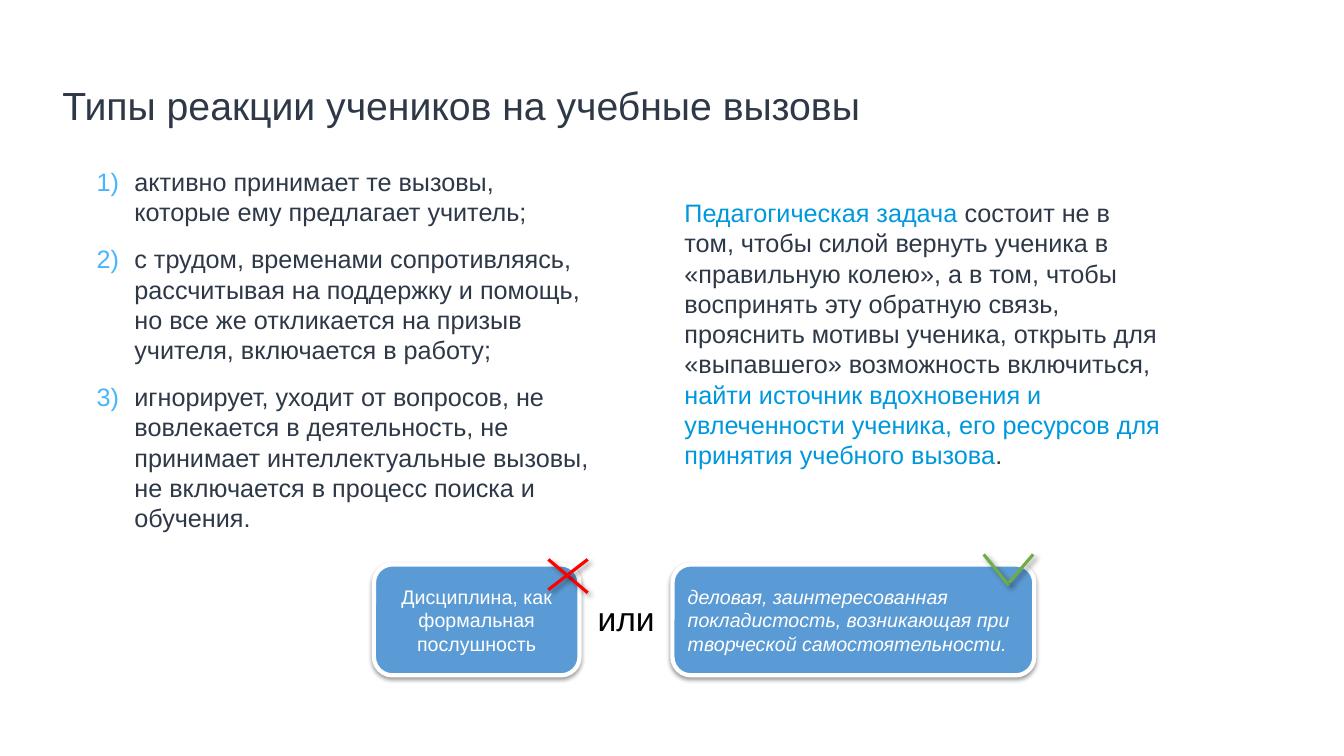
from lxml.etree import SubElement
from pptx import Presentation
from pptx.dml.color import RGBColor as Color
from pptx.enum.shapes import MSO_CONNECTOR as Connector, MSO_SHAPE as Shape
from pptx.enum.text import MSO_ANCHOR as Anchor, MSO_AUTO_SIZE as Fit, PP_ALIGN as Align
from pptx.oxml.ns import qn
from pptx.util import Pt

COLORS = {
    "ink": "2E3847", "accent": "0098DC", "number": "48B6FB", "black": "000000",
    "white": "FFFFFF", "card": "5B9BD5", "wrong": "FF0000", "right": "70AD47",
}
FLUSH = {"margin_left": 0, "margin_top": 0, "margin_right": 0, "margin_bottom": 0,
         "word_wrap": True, "auto_size": Fit.NONE, "vertical_anchor": Anchor.TOP}
LIST_SPACING = {"line_spacing": Pt(21.6), "space_before": Pt(0), "space_after": Pt(12)}
CARD_SHADOW = {"blur": 3.1, "distance": 1.6, "angle": 90, "alpha": 38}
MARK_SHADOW = {"blur": 4, "distance": 3, "angle": 45, "alpha": 40}


def apply(target, values):
    for name, value in values.items():
        setattr(target, name, value)


def rgb(name):
    return Color.from_string(COLORS[name])


class SlideBuilder:
    font_name = "Arial"

    def __init__(self, deck, layout):
        self.page = deck.slides.add_slide(layout)

    def place(self, box, area):
        apply(box, dict(zip(("left", "top", "width", "height"), map(Pt, area))))

    def add_spans(self, para, spans, size, italic=False):
        for text, color in spans:
            span = para.add_run()
            span.text = text
            apply(span.font, {"name": self.font_name, "size": Pt(size),
                              "bold": False, "italic": italic})
            span.font.color.rgb = rgb(color)

    def shadow(self, effects, blur, distance, angle, alpha):
        outer = SubElement(effects, qn("a:outerShdw"), blurRad=str(Pt(blur)),
                           dist=str(Pt(distance)), dir=str(angle * 60000),
                           algn="ctr", rotWithShape="0")
        tint = SubElement(outer, qn("a:srgbClr"), val=COLORS["black"])
        SubElement(tint, qn("a:alpha"), val=str(alpha * 1000))

    def title(self, text, area):
        box = self.page.shapes.title
        self.place(box, area)
        apply(box.text_frame, {**FLUSH, "margin_top": Pt(3.5)})
        para = box.text_frame.paragraphs[0]
        apply(para, {"alignment": Align.LEFT, "line_spacing": 1.2, "space_before": Pt(0)})
        self.add_spans(para, [(text, "ink")], 28)

    def body(self, index, area, items, margin, indent=0, numbered=False):
        box = self.page.placeholders[index]
        self.place(box, area)
        frame = box.text_frame
        apply(frame, FLUSH)
        for position, spans in enumerate(items):
            para = frame.add_paragraph() if position else frame.paragraphs[0]
            props = para._p.get_or_add_pPr()
            props.set("marL", str(Pt(margin)))
            props.set("indent", str(Pt(indent)))
            if numbered:
                color = SubElement(props, qn("a:buClr"))
                SubElement(color, qn("a:srgbClr"), val=COLORS["number"])
                SubElement(props, qn("a:buFont"), typeface=self.font_name)
                SubElement(props, qn("a:buAutoNum"), type="arabicParenR")
            else:
                SubElement(props, qn("a:buNone"))
            apply(para, LIST_SPACING)
            self.add_spans(para, spans, 18)

    def label(self, text, area):
        box = self.page.shapes.add_textbox(*map(Pt, area))
        apply(box.text_frame, {"word_wrap": False, "auto_size": Fit.SHAPE_TO_FIT_TEXT})
        self.add_spans(box.text_frame.paragraphs[0], [(text, "black")], 24)

    def card(self, text, area, alignment, italic=False):
        box = self.page.shapes.add_shape(Shape.ROUNDED_RECTANGLE, *map(Pt, area))
        box.fill.solid()
        box.fill.fore_color.rgb = rgb("card")
        box.line.color.rgb = rgb("white")
        box.line.width = Pt(3)
        box.shadow.inherit = False
        self.shadow(box._element.spPr.find(qn("a:effectLst")), **CARD_SHADOW)
        apply(box.text_frame, {"word_wrap": True, "vertical_anchor": Anchor.MIDDLE})
        para = box.text_frame.paragraphs[0]
        para.alignment = alignment
        self.add_spans(para, [(text, "white")], 14, italic)

    def stroke(self, ends, color):
        line = self.page.shapes.add_connector(Connector.STRAIGHT, *map(Pt, ends))
        line.line.color.rgb = rgb(color)
        line.line.width = Pt(2.25)
        self.shadow(SubElement(line._element.spPr, qn("a:effectLst")), **MARK_SHADOW)


def main():
    deck = Presentation()
    apply(deck, {"slide_width": Pt(960), "slide_height": Pt(540)})
    slide = SlideBuilder(deck, deck.slide_layouts[3])

    slide.title("Типы реакции учеников на учебные вызовы", (44.6, 48.2, 767.5, 51.1))
    reactions = [
        "активно принимает те вызовы, которые ему предлагает учитель;",
        "с трудом, временами сопротивляясь, рассчитывая на поддержку и помощь, "
        "но все же откликается на призыв учителя, включается в работу;",
        "игнорирует, уходит от вопросов, не вовлекается в деятельность, не принимает "
        "интеллектуальные вызовы, не включается в процесс поиска и обучения.",
    ]
    slide.body(1, (60, 118.8, 363.6, 280.8), [[(text, "ink")] for text in reactions],
               margin=36, indent=-27, numbered=True)
    task = [
        ("Педагогическая задача ", "accent"),
        ("состоит не в том, чтобы силой вернуть ученика в «правильную колею», "
         "а в том, чтобы воспринять эту обратную связь, прояснить мотивы ученика, "
         "открыть для «выпавшего» возможность включиться, ", "ink"),
        ("найти источник вдохновения и увлеченности ученика, его ресурсов "
         "для принятия учебного вызова", "accent"),
        (".", "ink"),
    ]
    slide.body(2, (480.3, 141.1, 349.9, 212.4), [task], margin=8.6)

    slide.label("или", (419.8, 423.4, 55.4, 36))
    slide.card("Дисциплина, как формальная послушность",
               (267.1, 403.2, 146.9, 79.2), Align.CENTER)
    slide.card("деловая, заинтересованная покладистость, возникающая при "
               "творческой самостоятельности.",
               (480.3, 403.2, 258.5, 79.2), Align.LEFT, italic=True)

    strokes = [
        ((391.7, 399.6, 419.8, 423.4), "wrong"),
        ((391.7, 421.2, 419.8, 399.6), "wrong"),
        ((702.7, 396, 720.7, 418.3), "right"),
        ((720.7, 416.2, 738, 396), "right"),
    ]
    for ends, color in strokes:
        slide.stroke(ends, color)

    deck.save("out.pptx")


if __name__ == "__main__":
    main()
